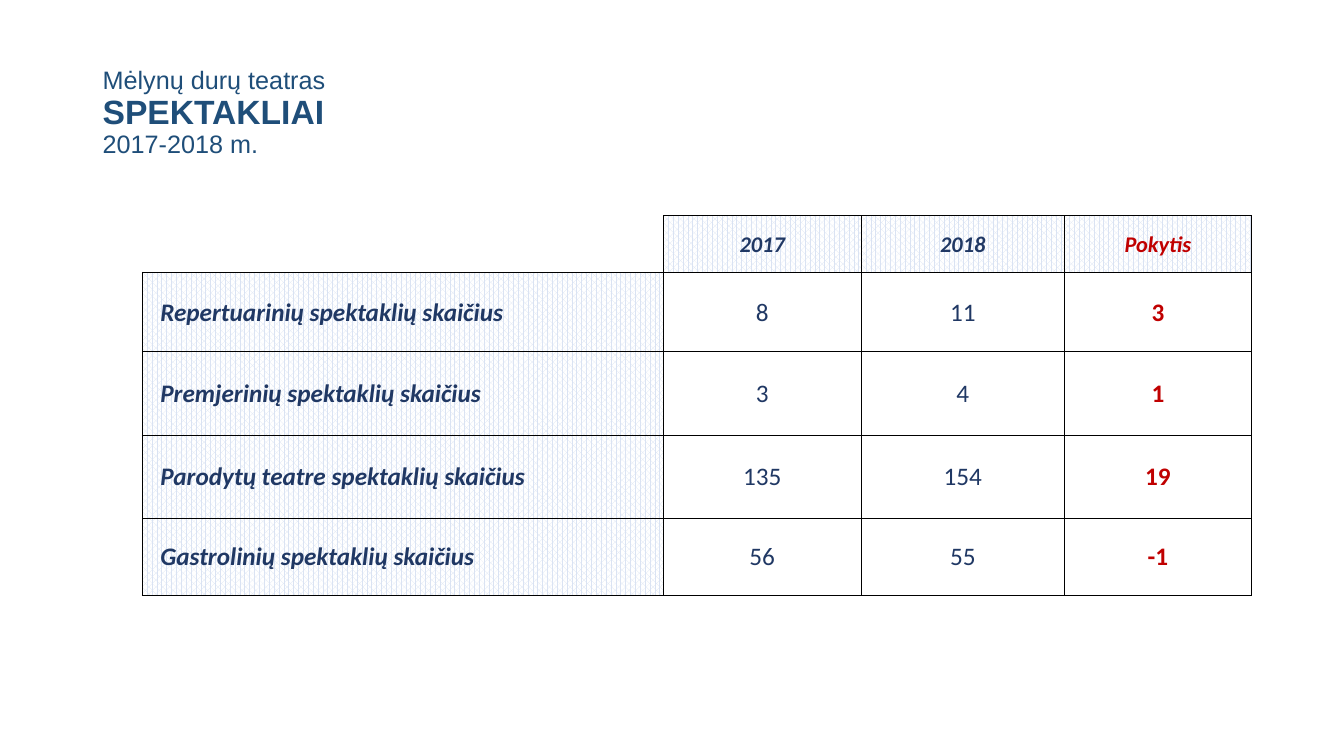
from lxml import etree
from pptx import Presentation
from pptx.dml.color import RGBColor
from pptx.enum.dml import MSO_PATTERN
from pptx.enum.text import MSO_ANCHOR, PP_ALIGN
from pptx.oxml.ns import qn
from pptx.util import Inches, Pt

MIDDLE = MSO_ANCHOR.MIDDLE
LEFT, CENTER = PP_ALIGN.LEFT, PP_ALIGN.CENTER
DOTTED = MSO_PATTERN.PERCENT_70

COLORS = {
    "title": "1F4E79",
    "text": "203864",
    "change": "C00000",
    "dots": "DAE3F3",
    "paper": "FFFFFF",
    "border": "000000",
}
TITLE_LINES = [
    ("Mėlynų durų teatras", 18, False),
    ("SPEKTAKLIAI", 24, True),
    ("2017-2018 m.", 18, False),
]
TABLE_ROWS = [
    ("", "2017", "2018", "Pokytis"),
    ("Repertuarinių spektaklių skaičius", "8", "11", "3"),
    ("Premjerinių spektaklių skaičius", "3", "4", "1"),
    ("Parodytų teatre spektaklių skaičius", "135", "154", "19"),
    ("Gastrolinių spektaklių skaičius", "56", "55", "-1"),
]
COLUMN_WIDTHS = [5.17, 1.96, 2.02, 1.85]
ROW_HEIGHTS = [0.56, 0.79, 0.83, 0.82, 0.77]


def color(name):
    return RGBColor.from_string(COLORS[name])


def add_span(para, text, font, size, color_name, bold=False, italic=False):
    span = para.add_run()
    span.text = text
    span.font.name = font
    span.font.size = Pt(size)
    span.font.bold = bold
    span.font.italic = italic
    span.font.color.rgb = color(color_name)


def add_title(page, left, top, width, height):
    box = page.shapes.add_textbox(Inches(left), Inches(top), Inches(width), Inches(height))
    frame = box.text_frame
    frame.word_wrap = True
    frame.vertical_anchor = MIDDLE
    para = frame.paragraphs[0]
    para.line_spacing = 0.9
    for index, (text, size, bold) in enumerate(TITLE_LINES):
        if index:
            para.add_line_break()
        add_span(para, text, "Arial", size, "title", bold)


def set_borders(cell, visible_sides):
    """Draw the named sides (L, R, T, B) and clear the others."""
    properties = cell._tc.get_or_add_tcPr()
    for side in "LRTB":
        line = etree.SubElement(properties, qn(f"a:ln{side}"), w=str(Pt(0.5)))
        if side in visible_sides:
            fill = etree.SubElement(line, qn("a:solidFill"))
            etree.SubElement(fill, qn("a:srgbClr"), val=COLORS["border"])
        else:
            etree.SubElement(line, qn("a:noFill"))


def fill_cell(cell, is_header):
    if is_header:
        cell.fill.patterned()
        cell.fill.pattern = DOTTED
        cell.fill.fore_color.rgb = color("dots")
        cell.fill.back_color.rgb = color("paper")
    else:
        cell.fill.background()


def add_cell(cell, text, row, column):
    is_label = column == 0
    is_corner = is_label and row == 0
    is_header = (is_label or row == 0) and not is_corner
    is_change = column == len(COLUMN_WIDTHS) - 1
    set_borders(cell, "RB" if is_corner else "LRTB")
    fill_cell(cell, is_header)
    cell.vertical_anchor = MIDDLE
    cell.margin_left = Inches(0.18 if is_label else 0.01)
    cell.margin_right = cell.margin_top = Inches(0.01)
    cell.margin_bottom = 0
    para = cell.text_frame.paragraphs[0]
    para.alignment = LEFT if is_label else CENTER
    if text:
        add_span(para, text, "Calibri", 16 if row == 0 else 18,
                 "change" if is_change else "text",
                 bold=is_header or is_change, italic=is_header)


def add_performance_table(page, left, top):
    table = page.shapes.add_table(
        len(ROW_HEIGHTS), len(COLUMN_WIDTHS), Inches(left), Inches(top),
        Inches(sum(COLUMN_WIDTHS)), Inches(sum(ROW_HEIGHTS))).table
    table.first_row = table.horz_banding = False
    for column, width in zip(table.columns, COLUMN_WIDTHS):
        column.width = Inches(width)
    for row, height in zip(table.rows, ROW_HEIGHTS):
        row.height = Inches(height)
    for row, texts in enumerate(TABLE_ROWS):
        for column, text in enumerate(texts):
            add_cell(table.cell(row, column), text, row, column)


def main():
    deck = Presentation()
    deck.slide_width, deck.slide_height = Inches(13.33), Inches(7.5)
    page = deck.slides.add_slide(deck.slide_layouts[6])
    add_title(page, 0.92, 0.4, 11.5, 1.45)
    add_performance_table(page, 1.41, 2.14)
    deck.save("out.pptx")


if __name__ == "__main__":
    main()
